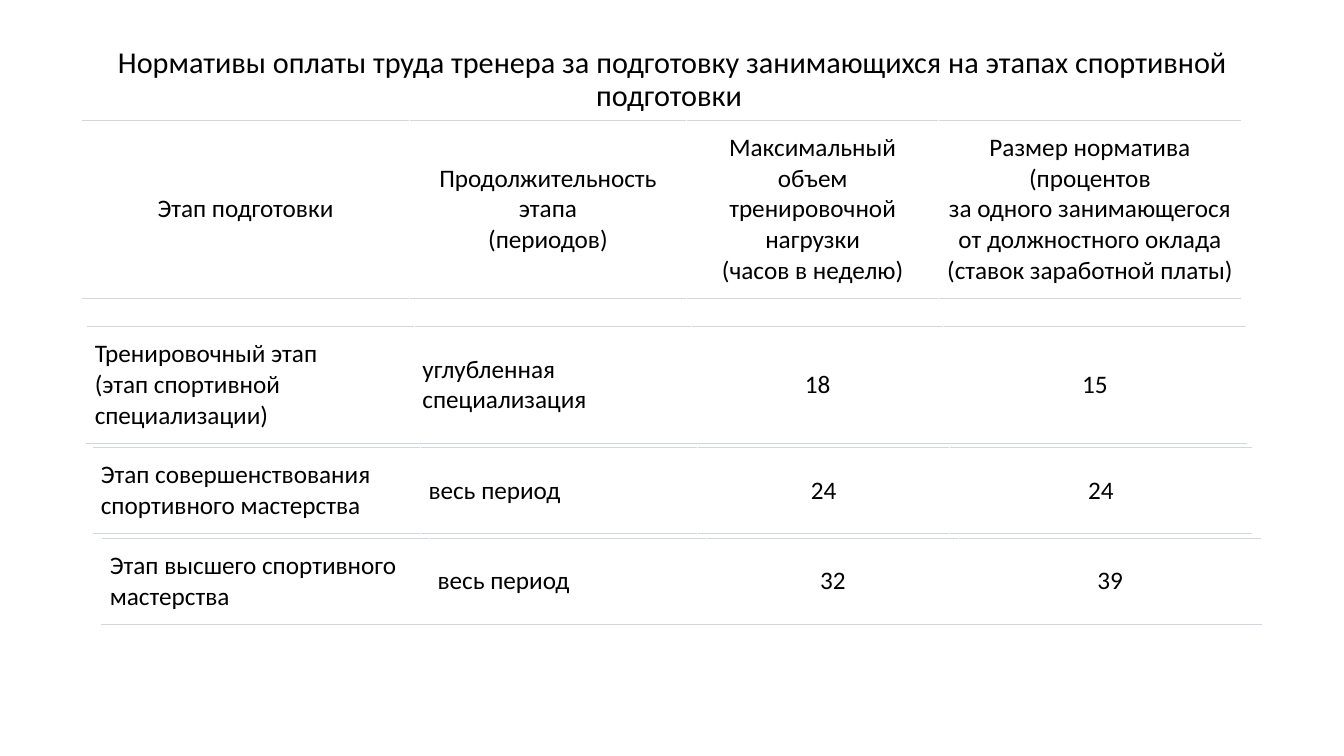
from dataclasses import dataclass

from lxml import etree
from pptx import Presentation, util as u
from pptx.dml.color import RGBColor
from pptx.enum import text
from pptx.oxml import ns


@dataclass(frozen=True)
class Theme:
    font: str = "Calibri"
    ink: str = "000000"
    paper: str = "FFFFFF"
    rule: str = "D1D7E1"
    rule_width: float = 0.6
    title_size: float = 21.6
    cell_size: float = 18


class Deck:
    """Builds the slide's elements in one theme."""

    def __init__(self, theme):
        self.theme = theme
        self.prs = Presentation()
        self.prs.slide_width = u.Inches(13.33)
        self.prs.slide_height = u.Inches(7.5)
        self.s = self.prs.slides.add_slide(self.prs.slide_layouts[5])

    def add_text(self, p, content, size, align):
        p.alignment = align
        for i, line in enumerate(content.split("\n")):
            if i:
                p.add_line_break()
            r = p.add_run()
            r.text = line
            r.font.name = self.theme.font
            r.font.size = u.Pt(size)
            r.font.bold = False
            r.font.color.rgb = RGBColor.from_string(self.theme.ink)

    def title(self, content, left, top, width, height):
        sp = self.s.shapes.title
        sp.left, sp.top = u.Inches(left), u.Inches(top)
        sp.width, sp.height = u.Inches(width), u.Inches(height)
        tf = sp.text_frame
        tf.word_wrap = True
        tf.auto_size = text.MSO_AUTO_SIZE.NONE
        tf.vertical_anchor = text.MSO_ANCHOR.MIDDLE
        p = tf.paragraphs[0]
        p.line_spacing = 0.9
        self.add_text(p, content, self.theme.title_size, text.PP_ALIGN.CENTER)

    def borders(self, cell):
        tc_pr = cell._tc.get_or_add_tcPr()
        for i, side in enumerate(("a:lnT", "a:lnB")):
            ln = etree.Element(ns.qn(side), w=str(u.Pt(self.theme.rule_width)))
            fill = etree.SubElement(ln, ns.qn("a:solidFill"))
            etree.SubElement(fill, ns.qn("a:srgbClr"), val=self.theme.rule)
            tc_pr.insert(i, ln)

    def row_table(self, values, aligns, widths, left, top, height):
        frame = self.s.shapes.add_table(
            1, len(widths), u.Inches(left), u.Inches(top),
            u.Inches(sum(widths)), u.Inches(height))
        table = frame.table
        table.first_row = table.horz_banding = False
        for i, (value, align, width) in enumerate(zip(values, aligns, widths)):
            table.columns[i].width = u.Inches(width)
            cell = table.cell(0, i)
            cell.margin_left = cell.margin_right = u.Inches(0.08)
            cell.margin_top = cell.margin_bottom = u.Inches(0.12)
            cell.vertical_anchor = text.MSO_ANCHOR.MIDDLE
            cell.fill.solid()
            cell.fill.fore_color.rgb = RGBColor.from_string(self.theme.paper)
            self.borders(cell)
            p = cell.text_frame.paragraphs[0]
            self.add_text(p, value, self.theme.cell_size, align)


COLUMNS = (3.25, 2.75, 2.5, 3)
CENTER, LEFT = text.PP_ALIGN.CENTER, text.PP_ALIGN.LEFT
HEADER_ALIGNS = (CENTER,) * 4
STAGE_ALIGNS = (LEFT, LEFT, CENTER, CENTER)
TABLES = (
    (("Этап подготовки",
      "Продолжительность этапа\n(периодов)",
      "Максимальный объем тренировочной нагрузки\n(часов в неделю)",
      "Размер норматива (процентов\nза одного занимающегося\n"
      "от должностного оклада\n(ставок заработной платы)"),
     HEADER_ALIGNS, 0.81, 1.19, 1.77),
    (("Тренировочный этап\n(этап спортивной специализации)",
      "углубленная специализация", "18", "15"),
     STAGE_ALIGNS, 0.86, 3.24, 1.15),
    (("Этап совершенствования спортивного мастерства",
      "весь период", "24", "24"),
     STAGE_ALIGNS, 0.92, 4.44, 0.85),
    (("Этап высшего спортивного мастерства",
      "весь период", "32", "39"),
     STAGE_ALIGNS, 1.01, 5.34, 0.85),
)


def main():
    deck = Deck(Theme())
    deck.title("Нормативы оплаты труда тренера за подготовку занимающихся "
               "на этапах спортивной подготовки ", 0.92, 0.4, 11.5, 0.79)
    for values, aligns, left, top, height in TABLES:
        deck.row_table(values, aligns, COLUMNS, left, top, height)
    deck.prs.save("out.pptx")


if __name__ == "__main__":
    main()
